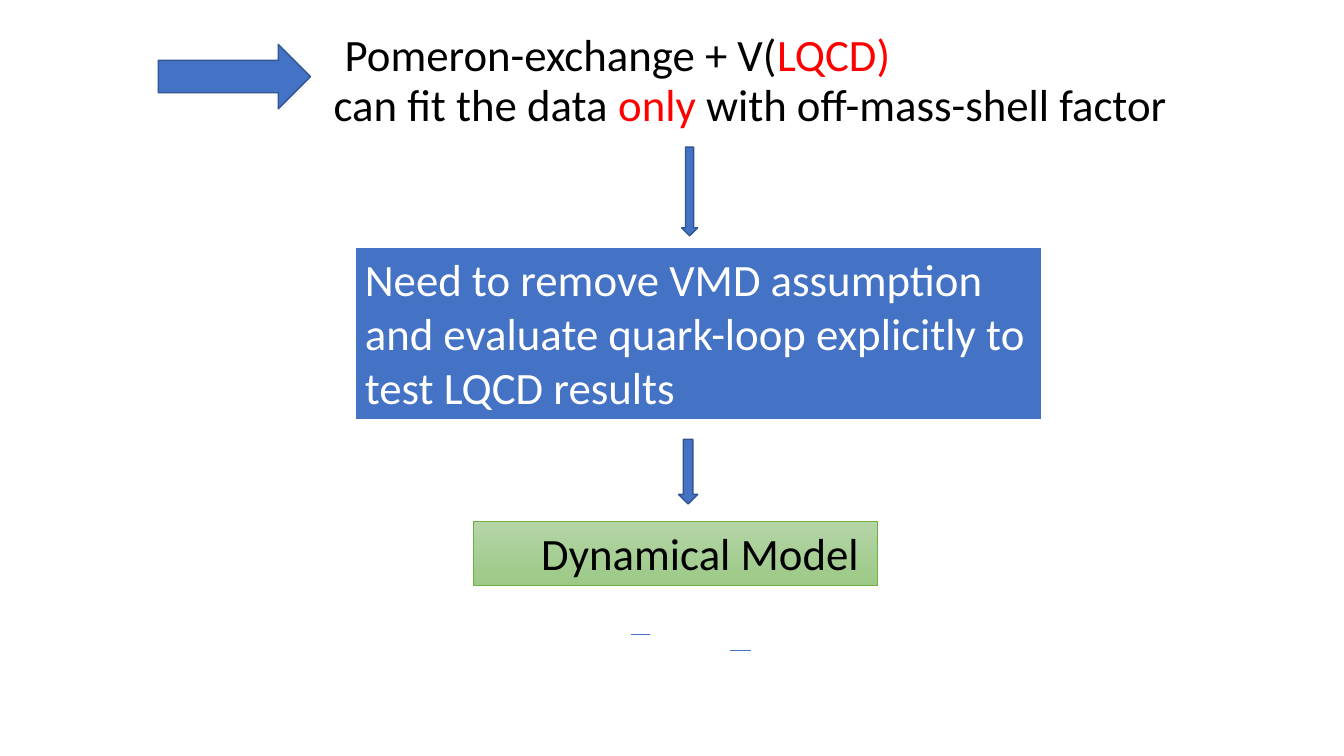
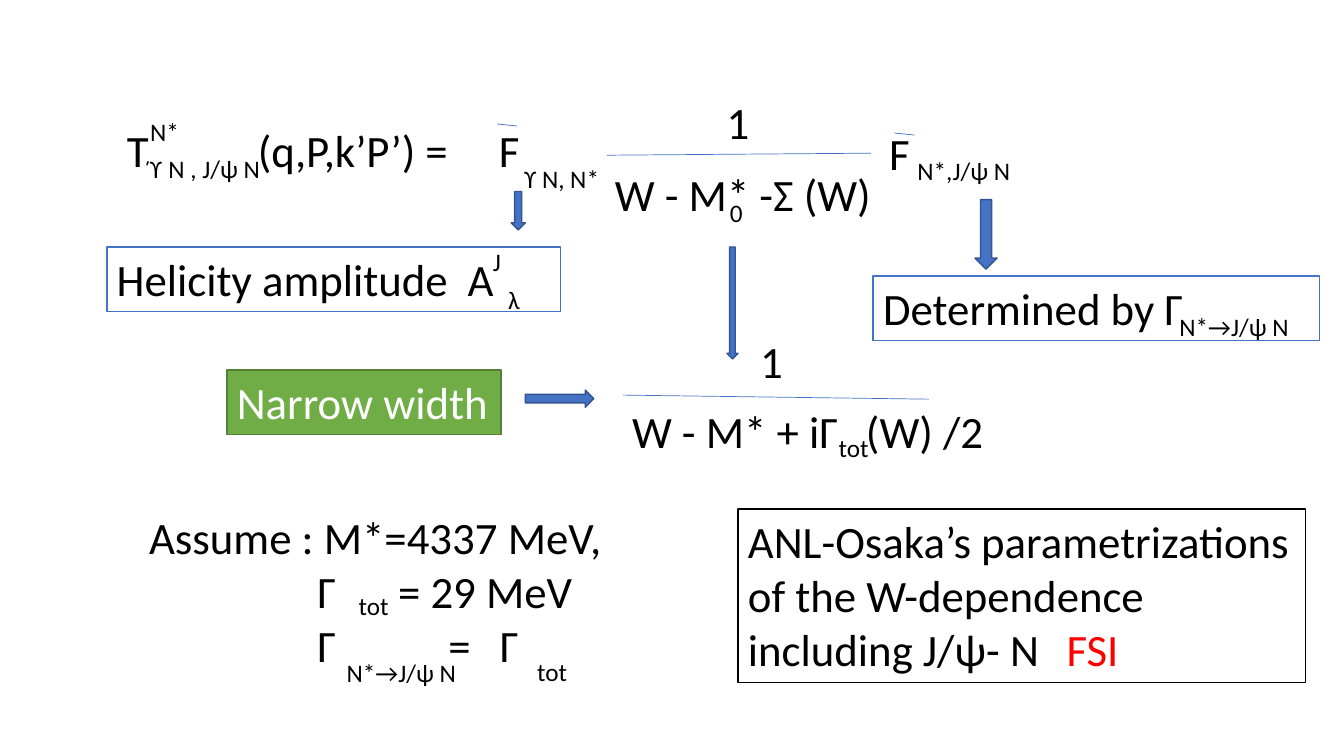
from lxml import etree
from pptx import Presentation
from pptx.dml.color import RGBColor
from pptx.enum.shapes import MSO_CONNECTOR, MSO_SHAPE
from pptx.enum.text import MSO_ANCHOR, MSO_AUTO_SIZE, PP_ALIGN
from pptx.oxml.ns import qn
from pptx.util import Inches, Pt

RECTANGLE = MSO_SHAPE.RECTANGLE
DOWN, RIGHT = MSO_SHAPE.DOWN_ARROW, MSO_SHAPE.RIGHT_ARROW
STRAIGHT = MSO_CONNECTOR.STRAIGHT

BLACK = RGBColor(0x00, 0x00, 0x00)
WHITE = RGBColor(0xFF, 0xFF, 0xFF)
RED = RGBColor(0xFF, 0x00, 0x00)
BLUE = RGBColor(0x44, 0x72, 0xC4)
DARK_BLUE = RGBColor(0x32, 0x54, 0x91)
GREEN = RGBColor(0x70, 0xAD, 0x47)
DARK_GREEN = RGBColor(0x53, 0x80, 0x35)
PALE_GREENS = RGBColor(0xB5, 0xD5, 0xA7), RGBColor(0x9C, 0xC9, 0x87)

FONT = "Calibri"
BODY_SIZE, INDEX_SIZE = 32, 18
BODY_HEIGHT, INDEX_HEIGHT, THREE_LINES = 0.64, 0.4, 1.72


def set_indent(paragraph, tabs, indent):
    """Set the tab stops and left indent, both in inches."""
    properties = paragraph._p.get_or_add_pPr()
    if indent:
        properties.set("marL", str(Inches(indent)))
    if tabs:
        stops = etree.SubElement(properties, qn("a:tabLst"))
        for position in tabs:
            etree.SubElement(stops, qn("a:tab"), pos=str(Inches(position)), algn="l")


def write(frame, lines, size=BODY_SIZE, color=BLACK, tabs=(), indent=0, wrap=False):
    """Fill a frame; a line is a list of strings or (string, colour) pairs.

    tabs holds one tuple of tab stops for each line.
    """
    layout = {
        "word_wrap": wrap or bool(tabs),
        "auto_size": MSO_AUTO_SIZE.SHAPE_TO_FIT_TEXT,
        "vertical_anchor": MSO_ANCHOR.TOP,
    }
    for name, value in layout.items():
        setattr(frame, name, value)
    for number, pieces in enumerate(lines):
        paragraph = frame.add_paragraph() if number else frame.paragraphs[0]
        paragraph.alignment = PP_ALIGN.LEFT
        set_indent(paragraph, tabs[number] if tabs else (), indent)
        for piece in pieces:
            words, shade = (piece, color) if isinstance(piece, str) else piece
            run = paragraph.add_run()
            run.text = words
            run.font.name = FONT
            run.font.size = Pt(size)
            run.font.color.rgb = shade


def add_text(slide, left, top, width, lines, height=BODY_HEIGHT, **style):
    box = slide.shapes.add_textbox(*map(Inches, (left, top, width, height)))
    write(box.text_frame, lines, **style)


def add_index(slide, left, top, width, words):
    """Place a small superscript or subscript."""
    add_text(slide, left, top, width, [[words]], INDEX_HEIGHT, size=INDEX_SIZE)


def add_outlined(slide, preset, place, fill, line, weight):
    shape = slide.shapes.add_shape(preset, *map(Inches, place))
    shape.shadow.inherit = False
    if isinstance(fill, RGBColor):
        shape.fill.solid()
        shape.fill.fore_color.rgb = fill
    else:
        shape.fill.gradient()
        shape.fill.gradient_angle = 270
        for stop, shade in zip(shape.fill.gradient_stops, fill):
            stop.color.rgb = shade
    shape.line.color.rgb = line
    shape.line.width = Pt(weight)
    return shape


def add_box(slide, place, lines, fill=WHITE, line=BLUE, weight=1, **style):
    box = add_outlined(slide, RECTANGLE, place, fill, line, weight)
    write(box.text_frame, lines, **style)


def add_arrow(slide, preset, *place):
    add_outlined(slide, preset, place, BLUE, DARK_BLUE, 1)


def add_bar(slide, *ends):
    """Draw a thin line, as a fraction bar or an overline."""
    bar = slide.shapes.add_connector(STRAIGHT, *map(Inches, ends))
    bar.line.color.rgb = BLUE
    bar.line.width = Pt(0.5)
    etree.SubElement(bar._element.spPr, qn("a:effectLst"))


def build_reasoning(slide):
    add_text(slide, 3.32, 0.22, 5.67, [["Pomeron-exchange + V(", ("LQCD)", RED)]])
    add_text(slide, 3.21, 0.71, 8.82,
             [["can fit the data ", ("only ", RED), "with off-mass-shell factor"]])
    add_box(slide, (3.52, 2.45, 6.82, THREE_LINES),
            [["Need to remove VMD assumption"],
             ["and evaluate quark-loop explicitly to"],
             ["test LQCD results"]],
            fill=BLUE, line=WHITE, weight=1.5, color=WHITE)
    add_box(slide, (4.7, 5.17, 4, BODY_HEIGHT), [["Dynamical Model"]],
            fill=PALE_GREENS, line=GREEN, weight=0.5, indent=0.57, wrap=True)
    add_arrow(slide, RIGHT, 1.57, 0.44, 1.51, 0.64)
    add_arrow(slide, DOWN, 6.76, 1.46, 0.16, 0.88)
    add_arrow(slide, DOWN, 6.73, 4.36, 0.19, 0.64)
    add_bar(slide, 6.26, 6.29, 6.45, 6.29)
    add_bar(slide, 7.24, 6.45, 7.45, 6.45)


def build_amplitude(slide):
    add_text(slide, 1.16, 1.17, 6.66, [["T\t(q,P,k’P’) ="]], tabs=[(1.3,)])
    for left, top, width, words in (
        (8.72, 1.2, 0.41, "F"),
        (4.85, 1.17, 0.41, "F"),
        (7.11, 0.89, 0.43, "1"),
        (6, 1.61, 2.77, "W - M* -Σ (W)"),
        (7.44, 3.26, 0.43, "1"),
    ):
        add_text(slide, left, top, width, [[words]])
    add_text(slide, 6.17, 3.96, 3.85, [["W - M* + iΓ\t(W) /2"]], tabs=[(2.32,)])
    add_text(slide, 1.38, 5.01, 4.84,
             [["Assume : M*=4337 MeV,"], ["\tΓ\t= 29 MeV"], ["\tΓ\t=\tΓ"]],
             THREE_LINES, tabs=[(), (1.67, 2.47), (1.67, 2.97, 3.48)])

    add_box(slide, (1.06, 2.45, 4.5, BODY_HEIGHT),
            [["Helicity amplitude\tA"]], tabs=[(3.48,)])
    add_box(slide, (8.66, 2.74, 4.43, BODY_HEIGHT), [["Determined by Γ"]], wrap=True)
    add_box(slide, (2.25, 3.67, 2.72, BODY_HEIGHT), [["Narrow width"]],
            fill=GREEN, line=DARK_GREEN, color=WHITE)
    add_box(slide, (7.32, 5.05, 5.63, THREE_LINES),
            [["ANL-Osaka’s parametrizations"],
             ["of the W-dependence"],
             ["including J/ψ- N\t", ("FSI", RED)]],
            line=BLACK, tabs=[(), (), (3.16,)])

    for index in (
        (1.39, 1.11, 0.49, "N*"),
        (1.38, 1.47, 1.32, "ϓ N , J/ψ N"),
        (9, 1.49, 1.14, "N*,J/ψ N"),
        (5.1, 1.57, 0.96, "ϒ N, N*"),
        (7.14, 1.91, 0.33, "0"),
        (4.79, 2.39, 0.28, "J"),
        (4.94, 2.77, 0.32, "λ"),
        (11.6, 3.04, 1.3, "N*→J/ψ N"),
        (8.22, 4.24, 0.5, "tot"),
        (3.46, 5.81, 0.5, "tot"),
        (3.34, 6.47, 1.3, "N*→J/ψ N"),
        (5.23, 6.46, 0.5, "tot"),
    ):
        add_index(slide, *index)

    for ends in (
        (4.93, 1.23, 5.13, 1.25),
        (8.87, 1.32, 9.07, 1.34),
        (6.02, 1.54, 8.64, 1.52),
        (6.18, 3.92, 9.21, 3.96),
    ):
        add_bar(slide, *ends)

    add_arrow(slide, DOWN, 5.07, 1.9, 0.14, 0.38)
    add_arrow(slide, DOWN, 9.67, 1.98, 0.22, 0.69)
    add_arrow(slide, DOWN, 7.21, 2.45, 0.11, 1.11)
    add_arrow(slide, RIGHT, 5.21, 3.87, 0.68, 0.17)


def main():
    deck = Presentation()
    deck.slide_width, deck.slide_height = Inches(13.33), Inches(7.5)
    blank = deck.slide_layouts[6]
    for build in (build_reasoning, build_amplitude):
        build(deck.slides.add_slide(blank))
    deck.save("out.pptx")


if __name__ == "__main__":
    main()
